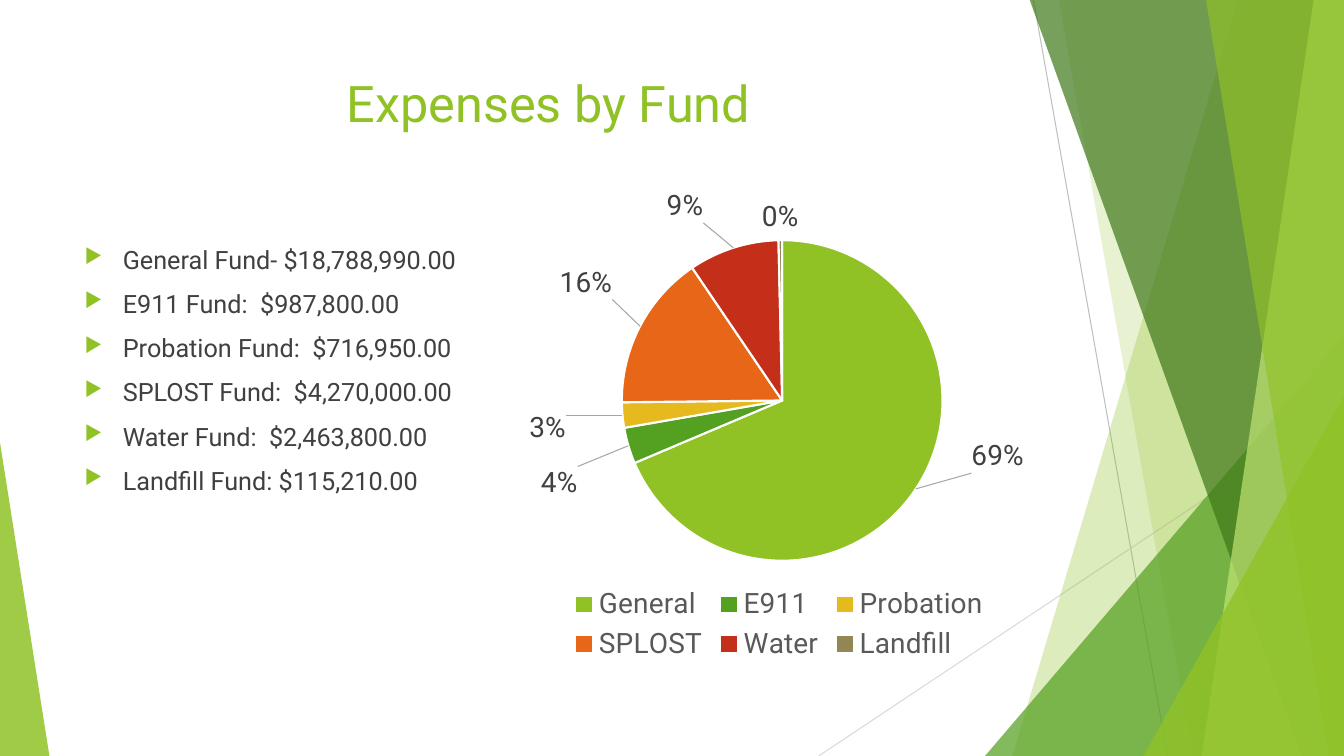
from lxml import etree
from pptx import Presentation
from pptx.chart.data import CategoryChartData
from pptx.dml.color import RGBColor
from pptx.enum.chart import XL_CHART_TYPE, XL_LABEL_POSITION, XL_LEGEND_POSITION
from pptx.enum.shapes import MSO_CONNECTOR, MSO_SHAPE
from pptx.enum.text import PP_ALIGN
from pptx.oxml import parse_xml
from pptx.oxml.ns import nsdecls, qn
from pptx.util import Inches, Pt

WIDTH, HEIGHT = 13.33, 7.5
FONT = "Roboto"
LIME = RGBColor(0x90, 0xC2, 0x26)
GREEN = RGBColor(0x54, 0xA0, 0x21)
FOREST = RGBColor(0x3F, 0x78, 0x19)
PALE_LIME = RGBColor(0xC0, 0xE4, 0x74)
GOLD = RGBColor(0xE6, 0xB9, 0x1E)
ORANGE = RGBColor(0xE7, 0x66, 0x18)
RED = RGBColor(0xC4, 0x2F, 0x1A)
OLIVE = RGBColor(0x91, 0x86, 0x55)
WHITE = RGBColor(0xFF, 0xFF, 0xFF)
BLACK = RGBColor(0x00, 0x00, 0x00)
TEXT_GRAY = RGBColor(0x40, 0x40, 0x40)
LEGEND_GRAY = RGBColor(0x59, 0x59, 0x59)
MID_GRAY = RGBColor(0xBF, 0xBF, 0xBF)
LIGHT_GRAY = RGBColor(0xD9, 0xD9, 0xD9)

FUND_LINES = [
    "General Fund- $18,788,990.00",
    "E911 Fund:  $987,800.00",
    "Probation Fund:  $716,950.00",
    "SPLOST Fund:  $4,270,000.00",
    "Water Fund:  $2,463,800.00",
    "Landfill Fund: $115,210.00",
]
FUNDS_IN_HUNDRED_THOUSANDS = [
    ("General", 188, LIME, (0.09, -0.11)),
    ("E911", 10, GREEN, (-0.08, 0.04)),
    ("Probation", 7, GOLD, (-0.09, -0.01)),
    ("SPLOST", 43, ORANGE, (-0.04, -0.05)),
    ("Water", 25, RED, (-0.05, -0.04)),
    ("Landfill", 1, OLIVE, None),
]


def style_shape(shape, color, opacity):
    shape.shadow.inherit = False
    shape.fill.solid()
    shape.fill.fore_color.rgb = color
    shape.line.fill.background()
    srgb = shape._element.spPr.find(qn("a:solidFill")).find(qn("a:srgbClr"))
    etree.SubElement(srgb, qn("a:alpha")).set("val", str(opacity * 1000))


def add_line(page, start, end, color):
    line = page.shapes.add_connector(
        MSO_CONNECTOR.STRAIGHT, *(Inches(value) for value in start + end))
    line.line.color.rgb = color
    line.line.width = Pt(0.75)
    etree.SubElement(line._element.spPr, qn("a:effectLst"))


def add_band(page, top_left, bottom_left, color, opacity):
    builder = page.shapes.build_freeform(Inches(top_left), Inches(-0.01))
    builder.add_line_segments([
        (Inches(WIDTH), Inches(-0.01)),
        (Inches(WIDTH), Inches(HEIGHT)),
        (Inches(bottom_left), Inches(HEIGHT)),
    ])
    style_shape(builder.convert_to_shape(), color, opacity)


def add_corner(page, left, top, width, apex, color, opacity):
    corner = page.shapes.add_shape(
        MSO_SHAPE.ISOSCELES_TRIANGLE, Inches(left), Inches(top),
        Inches(width), Inches(HEIGHT - top))
    corner.adjustments[0] = apex
    style_shape(corner, color, opacity)


def add_facets(page):
    add_line(page, (10.25, 0), (11.58, HEIGHT), MID_GRAY)
    add_line(page, (WIDTH, 4.03), (8.12, HEIGHT), LIGHT_GRAY)
    add_band(page, 12.28, 10.04, LIME, 30)
    add_band(page, 10.5, 11.83, LIME, 20)
    add_corner(page, 9.77, 3.33, 3.56, 1, GREEN, 72)
    add_band(page, 10.21, 12.91, FOREST, 70)
    add_band(page, 13.03, 11.92, PALE_LIME, 70)
    add_band(page, 11.96, 13.18, LIME, 65)
    add_corner(page, 11.34, 3.93, 1.99, 1, LIME, 80)
    add_corner(page, 0, 4.39, 0.49, 0, LIME, 85)


def style_font(font, size, color):
    font.name = FONT
    font.size = Pt(size)
    font.color.rgb = color


def add_bullet(para):
    props = para._p.get_or_add_pPr()
    props.set("marL", str(Inches(0.38)))
    props.set("indent", str(-Inches(0.38)))
    color = etree.SubElement(props, qn("a:buClr"))
    etree.SubElement(color, qn("a:srgbClr")).set("val", str(LIME))
    etree.SubElement(props, qn("a:buSzPct")).set("val", "80000")
    etree.SubElement(props, qn("a:buChar")).set("char", "▶")


def add_text(page, place, lines, size, color, bulleted=False):
    box = page.shapes.add_textbox(*(Inches(value) for value in place))
    frame = box.text_frame
    frame.word_wrap = True
    for index, line in enumerate(lines):
        para = frame.add_paragraph() if index else frame.paragraphs[0]
        if bulleted:
            para.space_before = Pt(10)
            add_bullet(para)
        else:
            para.alignment = PP_ALIGN.CENTER
        span = para.add_run()
        span.text = line
        style_font(span.font, size, color)


def manual_layout(**values):
    entries = "".join(
        f'<c:{name} val="{value}"/>' for name, value in values.items())
    return parse_xml(f'<c:layout {nsdecls("c")}><c:manualLayout>{entries}'
                     '</c:manualLayout></c:layout>')


def move_label(series, index, offset):
    label = series.points[index].data_label
    style_font(label.font, 20, TEXT_GRAY)
    label.position = XL_LABEL_POSITION.OUTSIDE_END
    element = series.data_labels._element.findall(qn("c:dLbl"))[-1]
    element.find(qn("c:showVal")).set("val", "0")
    element.find(qn("c:showPercent")).set("val", "1")
    across, down = offset
    element.find(qn("c:idx")).addnext(manual_layout(x=across, y=down))


def add_leader_lines(labels):
    labels._element.append(parse_xml(
        f'<c:leaderLines {nsdecls("c", "a")}><c:spPr><a:ln w="9525"><a:solidFill>'
        '<a:srgbClr val="A6A6A6"/></a:solidFill></a:ln></c:spPr></c:leaderLines>'))


def add_fund_pie(page):
    data = CategoryChartData(number_format='"$"#,##0.00')
    data.categories = [name for name, *_ in FUNDS_IN_HUNDRED_THOUSANDS]
    data.add_series(
        "Series 1", [amount for _, amount, *_ in FUNDS_IN_HUNDRED_THOUSANDS])
    chart = page.shapes.add_chart(
        XL_CHART_TYPE.PIE, Inches(4.94), Inches(1.86),
        Inches(5.58), Inches(4.75), data).chart
    style_font(chart.font, 10, BLACK)
    chart.has_title = False
    chart.has_legend = True
    chart.legend.position = XL_LEGEND_POSITION.BOTTOM
    chart.legend.include_in_layout = False
    style_font(chart.legend.font, 20, LEGEND_GRAY)

    plot = chart.plots[0]
    plot.vary_by_categories = True
    series = plot.series[0]
    labels = series.data_labels
    labels.show_percentage = True
    labels.show_value = False
    labels.number_format = "0%"
    labels.number_format_is_linked = False
    labels.position = XL_LABEL_POSITION.OUTSIDE_END
    style_font(labels.font, 20, TEXT_GRAY)
    add_leader_lines(labels)

    for index, (_, _, color, offset) in enumerate(FUNDS_IN_HUNDRED_THOUSANDS):
        slice_format = series.points[index].format
        slice_format.fill.solid()
        slice_format.fill.fore_color.rgb = color
        slice_format.line.color.rgb = WHITE
        slice_format.line.width = Pt(1.5)
        if offset:
            move_label(series, index, offset)

    area = chart._chartSpace.find(".//" + qn("c:plotArea"))
    for layout in area.findall(qn("c:layout")):
        area.remove(layout)
    area.insert(0, manual_layout(
        layoutTarget="inner", xMode="edge", yMode="edge",
        x=0.22, y=0.11, w=0.57, h=0.67))


def main():
    deck = Presentation()
    deck.slide_width = Inches(WIDTH)
    deck.slide_height = Inches(HEIGHT)
    page = deck.slides.add_slide(deck.slide_layouts[6])
    add_facets(page)
    add_text(page, (0.74, 0.67, 9.4, 1.44), ["Expenses by Fund"], 36, LIME)
    add_text(page, (0.74, 2.37, 4.58, 4.24), FUND_LINES, 18, TEXT_GRAY, True)
    add_fund_pie(page)
    deck.save("out.pptx")


if __name__ == "__main__":
    main()
